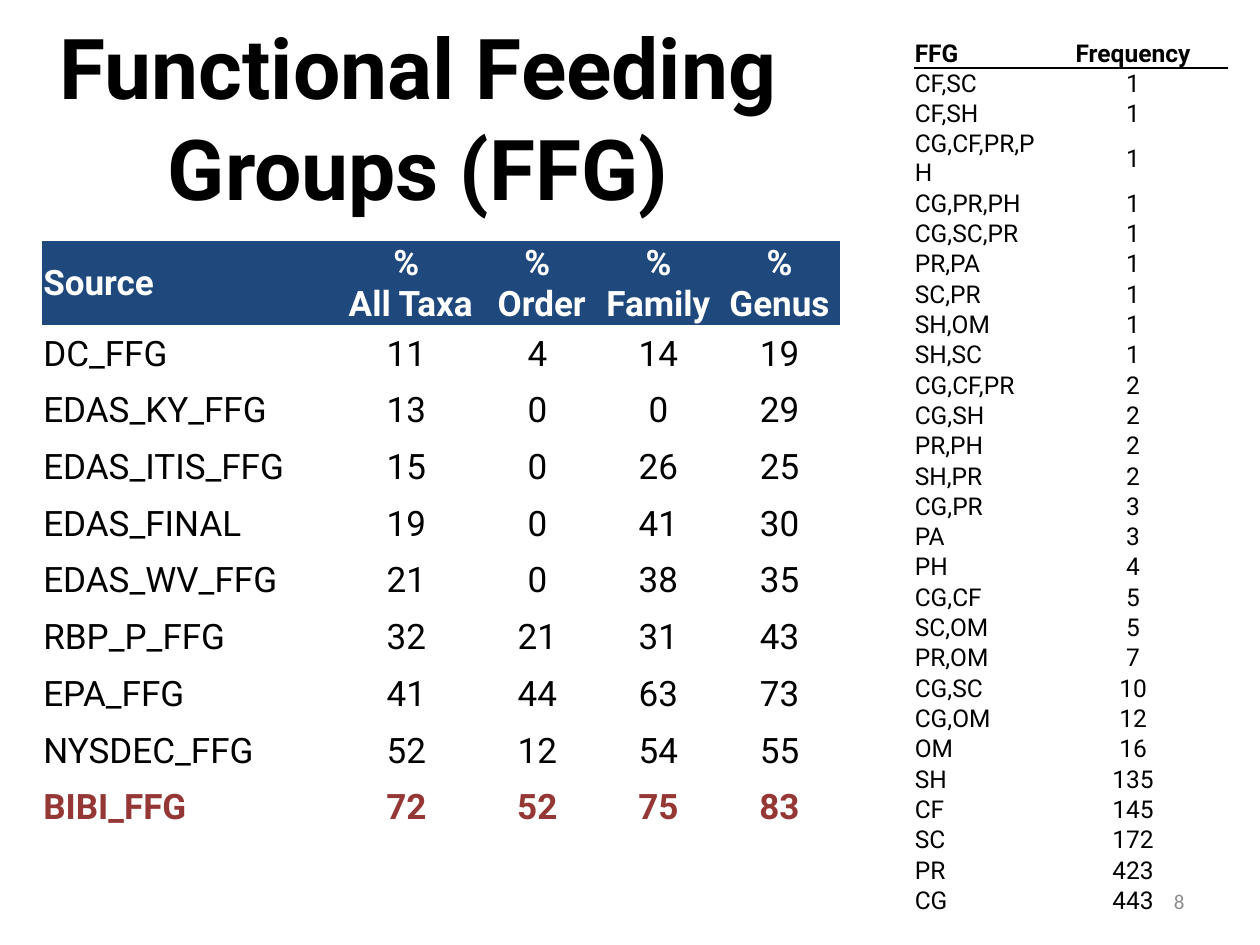
from dataclasses import dataclass

from lxml import etree
from pptx import Presentation
from pptx.dml.color import RGBColor
from pptx.enum.text import MSO_ANCHOR, MSO_AUTO_SIZE, PP_ALIGN
from pptx.oxml.ns import qn
from pptx.util import Pt

LEFT, CENTER, RIGHT = PP_ALIGN.LEFT, PP_ALIGN.CENTER, PP_ALIGN.RIGHT
MIDDLE = MSO_ANCHOR.MIDDLE
NO_AUTOFIT = MSO_AUTO_SIZE.NONE
PLAIN_TABLE_STYLE = "{2D5ABB26-0587-4C30-8999-92F81FD0307C}"

TITLE = "Functional Feeding Groups (FFG)"
PAGE_NUMBER = "8"

SOURCES = [
    ("Source", "%\n All Taxa", "%\n Order", "% Family", "% Genus"),
    ("DC_FFG", 11, 4, 14, 19),
    ("EDAS_KY_FFG", 13, 0, 0, 29),
    ("EDAS_ITIS_FFG", 15, 0, 26, 25),
    ("EDAS_FINAL", 19, 0, 41, 30),
    ("EDAS_WV_FFG", 21, 0, 38, 35),
    ("RBP_P_FFG", 32, 21, 31, 43),
    ("EPA_FFG", 41, 44, 63, 73),
    ("NYSDEC_FFG", 52, 12, 54, 55),
    ("BIBI_FFG", 72, 52, 75, 83),
]

FREQUENCIES = [
    ("FFG", "Frequency"),
    ("CF,SC", 1), ("CF,SH", 1), ("CG,CF,PR,PH", 1), ("CG,PR,PH", 1),
    ("CG,SC,PR", 1), ("PR,PA", 1), ("SC,PR", 1), ("SH,OM", 1),
    ("SH,SC", 1), ("CG,CF,PR", 2), ("CG,SH", 2), ("PR,PH", 2),
    ("SH,PR", 2), ("CG,PR", 3), ("PA", 3), ("PH", 4),
    ("CG,CF", 5), ("SC,OM", 5), ("PR,OM", 7), ("CG,SC", 10),
    ("CG,OM", 12), ("OM", 16), ("SH", 135), ("CF", 145),
    ("SC", 172), ("PR", 423), ("CG", 443),
]


@dataclass(frozen=True)
class Theme:
    font: str = "Roboto"
    number_font: str = "Calibri"
    ink: str = "000000"
    white: str = "FFFFFF"
    header: str = "1F497D"
    highlight: str = "953735"
    muted: str = "8C8C8C"
    title_size: int = 48
    source_size: int = 20
    frequency_size: int = 14
    number_size: int = 12


THEME = Theme()


def style_text(frame, size, color, align, bold=False, font=THEME.font):
    for paragraph in frame.paragraphs:
        paragraph.alignment = align
        paragraph.font.name = font
        paragraph.font.size = Pt(size)
        paragraph.font.bold = bold
        paragraph.font.color.rgb = RGBColor.from_string(color)


def underline_cell(cell):
    border = etree.Element(qn("a:lnB"), w=str(Pt(1)))
    fill = etree.SubElement(border, qn("a:solidFill"))
    etree.SubElement(fill, qn("a:srgbClr"), val=THEME.ink)
    cell._tc.get_or_add_tcPr().insert(0, border)


def add_grid(slide, rows, left, top, widths, heights, size, row_style):
    grid = slide.shapes.add_table(
        len(rows), len(widths), Pt(left), Pt(top), Pt(sum(widths)), Pt(sum(heights))
    ).table
    grid.first_row = grid.horz_banding = False
    grid._tbl.tblPr.find(qn("a:tableStyleId")).text = PLAIN_TABLE_STYLE
    for column, width in zip(grid.columns, widths):
        column.width = Pt(width)
    for r, (values, height) in enumerate(zip(rows, heights)):
        grid.rows[r].height = Pt(height)
        color, bold, fill = row_style(r)
        for c, value in enumerate(values):
            cell = grid.cell(r, c)
            cell.text = str(value)
            cell.vertical_anchor = MIDDLE
            cell.margin_left = cell.margin_right = cell.margin_top = Pt(0.75)
            cell.margin_bottom = 0
            style_text(cell.text_frame, size, color, CENTER if c else LEFT, bold)
            if fill:
                cell.fill.solid()
                cell.fill.fore_color.rgb = RGBColor.from_string(fill)
            else:
                cell.fill.background()
    return grid


def source_style(row):
    if row == 0:
        return THEME.white, True, THEME.header
    if row == len(SOURCES) - 1:
        return THEME.highlight, True, None
    return THEME.ink, False, None


def frequency_style(row):
    return THEME.ink, row == 0, None


def main():
    deck = Presentation()
    deck.slide_width, deck.slide_height = Pt(720), Pt(540)
    slide = deck.slides.add_slide(deck.slide_layouts[5])

    title = slide.shapes.title
    title.left, title.top, title.width, title.height = Pt(24), Pt(21.6), Pt(430), Pt(90)
    title.text_frame.text = TITLE
    title.text_frame.auto_size = NO_AUTOFIT
    title.text_frame.vertical_anchor = MIDDLE
    style_text(title.text_frame, THEME.title_size, THEME.ink, CENTER, True)

    frequency_heights = [31 if len(group) > 10 else 17.17 for group, _ in FREQUENCIES]
    frequency_grid = add_grid(
        slide, FREQUENCIES, 522, 21.6, [71, 109], frequency_heights,
        THEME.frequency_size, frequency_style,
    )
    for c in range(2):
        underline_cell(frequency_grid.cell(0, c))

    add_grid(
        slide, SOURCES, 24, 138, [168, 80.5, 69.2, 69.2, 69.2],
        [32.4] * len(SOURCES), THEME.source_size, source_style,
    )

    number = slide.shapes.add_textbox(Pt(516), Pt(500.5), Pt(168), Pt(28.75)).text_frame
    number.word_wrap = True
    number.vertical_anchor = MIDDLE
    number.text = PAGE_NUMBER
    style_text(number, THEME.number_size, THEME.muted, RIGHT, font=THEME.number_font)

    deck.save("out.pptx")


if __name__ == "__main__":
    main()
